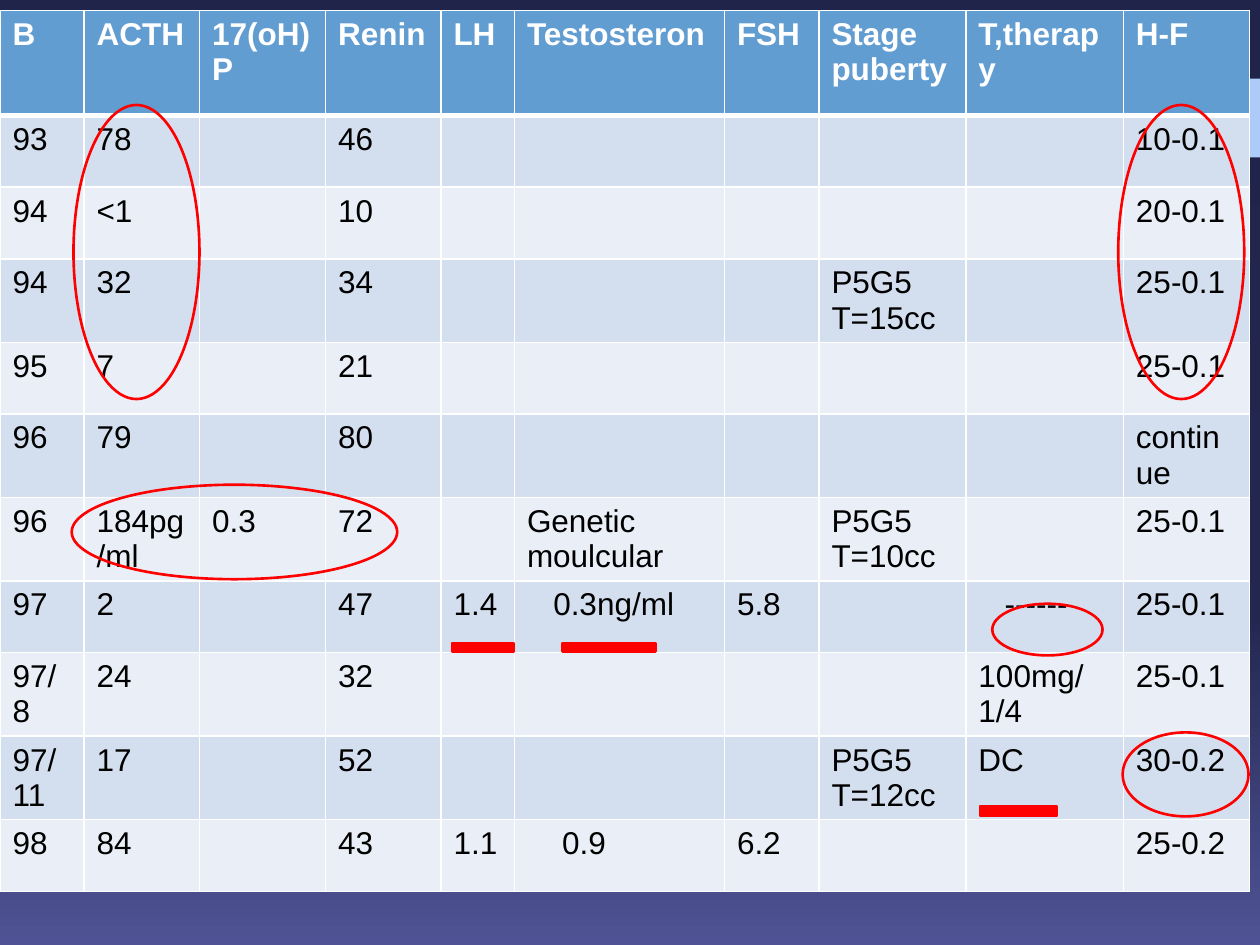
from copy import deepcopy
from dataclasses import dataclass

from lxml import etree
from pptx import Presentation
from pptx.dml.color import RGBColor
from pptx.enum import shapes
from pptx.oxml import ns
from pptx.util import Pt

HUES = {
    "top": "21244A", "mid": "232750", "low": "4F5395", "bar": "ACCBF9",
    "head": "629DD1", "odd": "D3DFEE", "even": "EAEFF7",
    "white": "FFFFFF", "ink": "000000", "mark": "FF0000",
}
KIND = shapes.MSO_SHAPE
WIDTHS = [48, 66, 72, 66, 42, 120, 54, 84, 90, 72]
HEAD, ONE, TWO = 60, 41, 47.7


@dataclass
class Row:
    height: float
    cells: dict[int, str]


@dataclass
class Mark:
    left: float
    top: float
    width: float
    height: float
    kind: shapes.MSO_SHAPE = KIND.OVAL


ROWS = [
    Row(HEAD, dict(enumerate([
        "B", "ACTH", "17(oH)P", "Renin", "LH", "Testosteron", "FSH",
        "Stage\npuberty", "T,therapy", "H-F"]))),
    Row(ONE, {0: "93", 1: "78", 3: "46", 9: "10-0.1"}),
    Row(ONE, {0: "94", 1: "<1", 3: "10", 9: "20-0.1"}),
    Row(TWO, {0: "94", 1: "32", 3: "34", 7: "P5G5\nT=15cc", 9: "25-0.1"}),
    Row(ONE, {0: "95", 1: "7", 3: "21", 9: "25-0.1"}),
    Row(TWO, {0: "96", 1: "79", 3: "80", 9: "continue"}),
    Row(TWO, {0: "96", 1: "184pg/ml", 2: "0.3", 3: "72",
              5: "Genetic moulcular", 7: "P5G5\nT=10cc", 9: "25-0.1"}),
    Row(ONE, {0: "97", 1: "2", 3: "47", 4: "1.4", 5: "0.3ng/ml", 6: "5.8",
              8: "------", 9: "25-0.1"}),
    Row(TWO, {0: "97/8", 1: "24", 3: "32", 8: "100mg/\n1/4", 9: "25-0.1"}),
    Row(TWO, {0: "97/11", 1: "17", 3: "52", 7: "P5G5\nT=12cc", 8: "DC",
              9: "30-0.2"}),
    Row(ONE, {0: "98", 1: "84", 3: "43", 4: "1.1", 5: "0.9", 6: "6.2",
              9: "25-0.2"}),
]
INDENTS = {(7, 5): 15, (7, 8): 15, (10, 5): 20}

MARKS = [
    Mark(639, 60, 72, 168),
    Mark(42, 60, 72, 168),
    Mark(41, 277, 186, 54),
    Mark(312, 359.5, 72, 21, KIND.MATH_MINUS),
    Mark(252, 359.5, 48, 21, KIND.MATH_MINUS),
    Mark(567, 345, 63, 29.5),
    Mark(641.5, 418.5, 72, 48),
    Mark(552, 451.5, 60, 24, KIND.MATH_MINUS),
]


def hue(name: str) -> RGBColor:
    return RGBColor.from_string(HUES[name])


def paint(slide) -> None:
    """Give the slide its three-stop vertical gradient."""
    fill = slide.background.fill
    fill.gradient()
    fill.gradient_angle = 270
    first = next(slide.element.iter(ns.qn("a:gs")))
    first.addnext(deepcopy(first))
    stops = [(0, "top"), (0.65, "mid"), (1, "low")]
    for stop, (place, name) in zip(fill.gradient_stops, stops):
        stop.position = place
        stop.color.rgb = hue(name)


def edge(cell, sides: dict[str, float]) -> None:
    """Draw white cell borders; sides maps L, R, T, B to points."""
    props = cell._tc.get_or_add_tcPr()
    for spot, (side, width) in enumerate(sides.items()):
        line = etree.Element(ns.qn(f"a:ln{side}"), w=str(Pt(width)))
        fill = etree.SubElement(line, ns.qn("a:solidFill"))
        etree.SubElement(fill, ns.qn("a:srgbClr"), val=HUES["white"])
        props.insert(spot, line)


def write(cell, words: str, head: bool, indent: float) -> None:
    frame = cell.text_frame
    for num, line in enumerate(words.split("\n")):
        para = frame.add_paragraph() if num else frame.paragraphs[0]
        if indent:
            para._p.get_or_add_pPr().set("marL", str(Pt(indent)))
        run = para.add_run()
        run.text = line
        run.font.name = "Arial"
        run.font.size = Pt(18)
        run.font.bold = head
        run.font.color.rgb = hue("white" if head else "ink")


def tabulate(slide) -> None:
    high = sum(row.height for row in ROWS)
    table = slide.shapes.add_table(
        len(ROWS), len(WIDTHS), 0, Pt(6), Pt(sum(WIDTHS)), Pt(high)).table
    for col, width in zip(table.columns, WIDTHS):
        col.width = Pt(width)
    for r, row in enumerate(ROWS):
        table.rows[r].height = Pt(row.height)
        band = "head" if r == 0 else "odd" if r % 2 else "even"
        sides = {"L": 1, "R": 1, "T": 3 if r == 1 else 1,
                 "B": 3 if r == 0 else 1}
        for c in range(len(WIDTHS)):
            cell = table.cell(r, c)
            cell.fill.solid()
            cell.fill.fore_color.rgb = hue(band)
            edge(cell, sides)
            if c in row.cells:
                write(cell, row.cells[c], r == 0, INDENTS.get((r, c), 0))


def draw(slide, mark: Mark):
    shape = slide.shapes.add_shape(
        mark.kind, Pt(mark.left), Pt(mark.top), Pt(mark.width),
        Pt(mark.height))
    shape.shadow.inherit = False
    shape.line.color.rgb = hue("mark")
    shape.line.width = Pt(1.5)
    if mark.kind == KIND.OVAL:
        shape.fill.background()
    else:
        shape.fill.solid()
        shape.fill.fore_color.rgb = hue("mark")
    return shape


def main() -> None:
    deck = Presentation()
    deck.slide_width, deck.slide_height = Pt(720), Pt(540)
    slide = deck.slides.add_slide(deck.slide_layouts[6])
    paint(slide)
    bar = draw(slide, Mark(675, 45, 45, 45, KIND.RECTANGLE))
    bar.fill.fore_color.rgb = hue("bar")
    bar.line.fill.background()
    tabulate(slide)
    for mark in MARKS:
        draw(slide, mark)
    deck.save("out.pptx")


if __name__ == "__main__":
    main()
